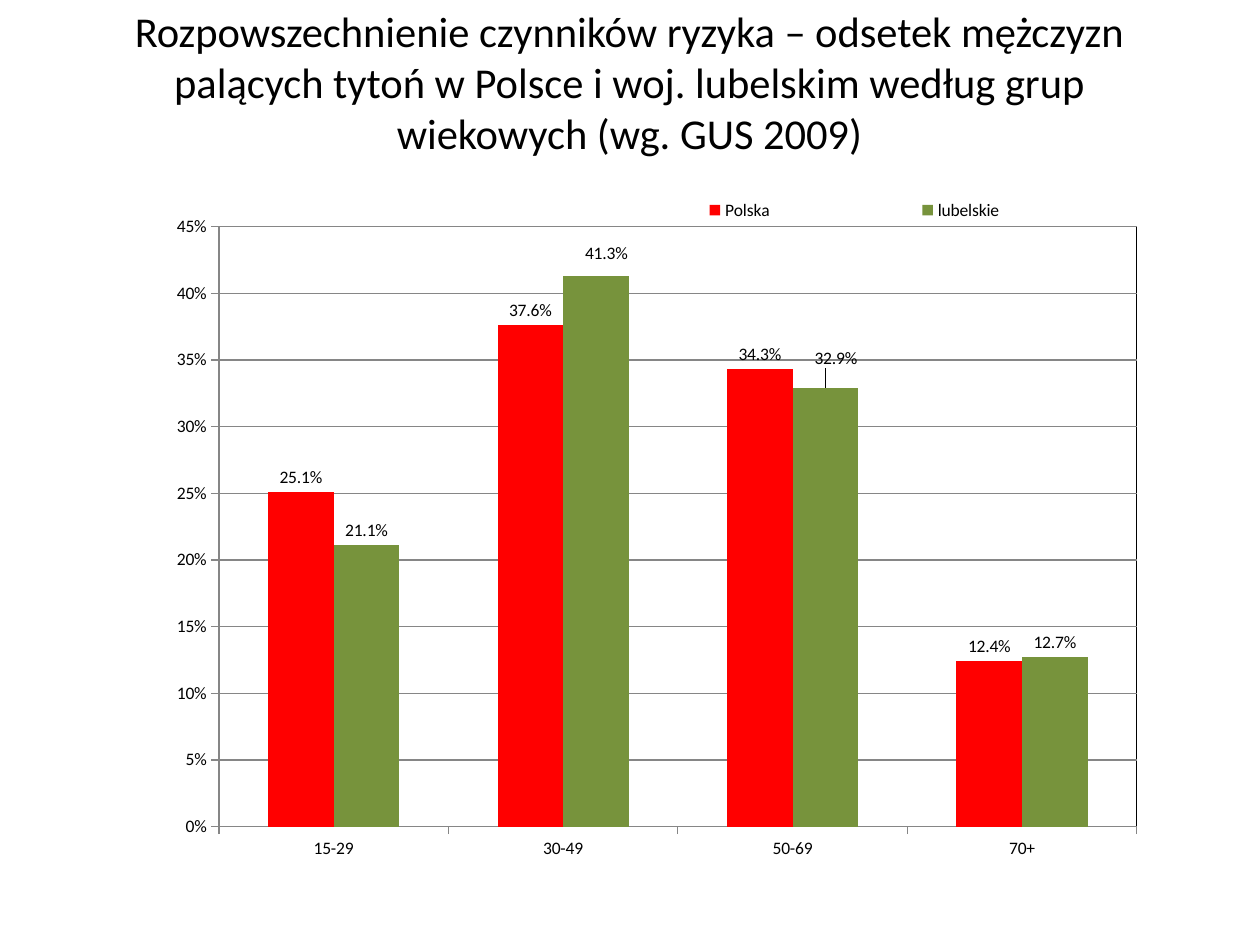
from dataclasses import dataclass

from pptx import Presentation
from pptx.chart.data import CategoryChartData
from pptx.dml.color import RGBColor
from pptx.enum.chart import XL_CHART_TYPE, XL_LABEL_POSITION, XL_LEGEND_POSITION, XL_TICK_MARK
from pptx.enum.text import MSO_ANCHOR, PP_ALIGN
from pptx.oxml import parse_xml
from pptx.oxml.ns import nsdecls, qn
from pptx.util import Inches, Pt

COLUMNS = XL_CHART_TYPE.COLUMN_CLUSTERED
OUTSIDE_END = XL_LABEL_POSITION.OUTSIDE_END
LEGEND_RIGHT = XL_LEGEND_POSITION.RIGHT
TICK_OUTSIDE = XL_TICK_MARK.OUTSIDE
TICK_NONE = XL_TICK_MARK.NONE
MIDDLE = MSO_ANCHOR.MIDDLE
CENTER = PP_ALIGN.CENTER


@dataclass(frozen=True)
class Theme:
    font: str = "Calibri"
    title_size: float = 24.3
    chart_size: float = 10
    line_width: float = 0.75
    text: str = "000000"
    grid: str = "868686"
    poland: str = "FF0000"
    lublin: str = "77933C"


class SlideBuilder:
    def __init__(self, slide, theme):
        self.slide = slide
        self.theme = theme

    def style_font(self, font, size):
        font.name = self.theme.font
        font.size = Pt(size)
        font.color.rgb = RGBColor.from_string(self.theme.text)

    def style_line(self, line):
        line.width = Pt(self.theme.line_width)
        line.color.rgb = RGBColor.from_string(self.theme.grid)

    def place(self, parent, index, **values):
        for old_layout in parent.findall(qn("c:layout")):
            parent.remove(old_layout)
        settings = "".join(f'<c:{name} val="{value}"/>' for name, value in values.items())
        parent.insert(index, parse_xml(
            f'<c:layout {nsdecls("c")}><c:manualLayout>{settings}</c:manualLayout></c:layout>'))

    def title(self, text, left, top, width, height):
        box = self.slide.shapes.add_textbox(Inches(left), Inches(top), Inches(width), Inches(height))
        frame = box.text_frame
        frame.word_wrap = True
        frame.vertical_anchor = MIDDLE
        paragraph = frame.paragraphs[0]
        paragraph.alignment = CENTER
        run = paragraph.add_run()
        run.text = text
        self.style_font(run.font, self.theme.title_size)

    def column_chart(self, categories, series_values, colors, left, top, width, height):
        data = CategoryChartData(number_format="0.0%")
        data.categories = categories
        for name, values in series_values.items():
            data.add_series(name, values)
        chart = self.slide.shapes.add_chart(
            COLUMNS, Inches(left), Inches(top), Inches(width), Inches(height), data).chart
        chart.has_title = False
        self.style_font(chart.font, self.theme.chart_size)
        plot = chart.plots[0]
        plot.gap_width = 150
        plot.overlap = 0
        plot.vary_by_categories = False
        for series, color in zip(plot.series, colors):
            series.format.fill.solid()
            series.format.fill.fore_color.rgb = RGBColor.from_string(color)
            labels = series.data_labels
            labels.show_value = True
            labels.number_format = "0.0%"
            labels.number_format_is_linked = False
            labels.position = OUTSIDE_END
        self.style_axes(chart)
        self.style_plot_area(chart)
        self.legend(chart)
        return chart

    def style_axes(self, chart):
        for axis in (chart.category_axis, chart.value_axis):
            axis.major_tick_mark = TICK_OUTSIDE
            axis.minor_tick_mark = TICK_NONE
            self.style_line(axis.format.line)
        chart.category_axis.has_major_gridlines = False
        value_axis = chart.value_axis
        value_axis.minimum_scale = 0
        value_axis.maximum_scale = 0.45
        value_axis.major_unit = 0.05
        value_axis.has_major_gridlines = True
        self.style_line(value_axis.major_gridlines.format.line)
        value_axis.tick_labels.number_format = "0%"
        value_axis.tick_labels.number_format_is_linked = False

    def style_plot_area(self, chart):
        plot_area = chart._chartSpace.chart.plotArea
        self.place(plot_area, 0, layoutTarget="inner", xMode="edge", yMode="edge",
                   x=0.1, y=0.058, w=0.881, h=0.84)
        plot_area.append(parse_xml(
            f'<c:spPr {nsdecls("c", "a")}><a:noFill/><a:ln w="{Pt(self.theme.line_width)}">'
            f'<a:solidFill><a:srgbClr val="{self.theme.text}"/></a:solidFill></a:ln></c:spPr>'))

    def legend(self, chart):
        chart.has_legend = True
        legend = chart.legend
        legend.position = LEGEND_RIGHT
        legend.include_in_layout = False
        self.style_font(legend.font, self.theme.chart_size)
        self.place(legend._element, 1, xMode="edge", yMode="edge", x=0.43, y=0.02, w=0.56, h=0.03)

    def move_label(self, series, point_index, x, y):
        series.points[point_index].data_label.position = OUTSIDE_END
        for label in series.data_labels._element.findall(qn("c:dLbl")):
            if label.find(qn("c:idx")).get("val") == str(point_index):
                self.place(label, 1, x=x, y=y)
                label.insert(2, parse_xml(
                    f'<c:numFmt {nsdecls("c")} formatCode="0.0%" sourceLinked="0"/>'))


def main():
    presentation = Presentation()
    presentation.slide_width = Inches(10)
    presentation.slide_height = Inches(7.5)
    theme = Theme()
    builder = SlideBuilder(presentation.slides.add_slide(presentation.slide_layouts[6]), theme)
    builder.title(
        "Rozpowszechnienie czynników ryzyka – odsetek mężczyzn palących tytoń "
        "w Polsce i woj. lubelskim według grup wiekowych (wg. GUS 2009)",
        0.5, 0.3, 8.99, 0.69)
    chart = builder.column_chart(
        ["15-29", "30-49", "50-69", "70+"],
        {"Polska": [0.251, 0.376, 0.343, 0.124], "lubelskie": [0.211, 0.413, 0.329, 0.127]},
        [theme.poland, theme.lublin],
        0.91, 1.47, 8.27, 5.67)
    lublin_series = chart.plots[0].series[1]
    builder.move_label(lublin_series, 1, 0.01, -0.01)
    builder.move_label(lublin_series, 2, 0.01, -0.02)
    presentation.save("out.pptx")


if __name__ == "__main__":
    main()
